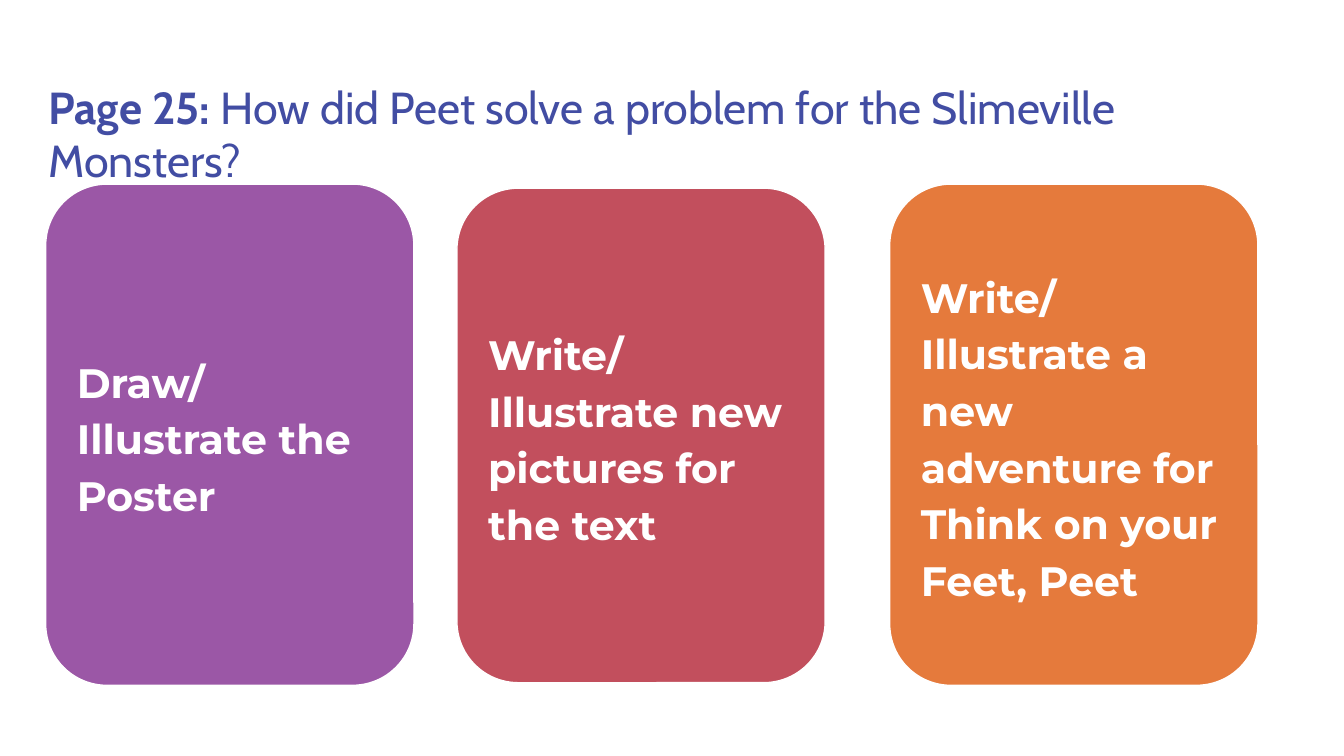
"""Build a slide with a question and three activity cards."""
import dataclasses

import pptx
import pptx.dml.color
import pptx.enum.shapes
import pptx.enum.text
import pptx.slide
import pptx.text.text
import pptx.util

Inches = pptx.util.Inches
Pt = pptx.util.Pt
Align = pptx.enum.text.PP_ALIGN
Anchor = pptx.enum.text.MSO_ANCHOR

COLORS = {
    "white": "FFFFFF",
    "blue": "424DA3",
    "purple": "9B57A6",
    "red": "C24F5D",
    "orange": "E57A3C",
}


@dataclasses.dataclass
class Card:
    left: float
    top: float
    height: float
    fill: str
    text: str


CARDS = [
    Card(0.34, 1.37, 3.73, "purple", "Draw/ Illustrate the Poster"),
    Card(3.4, 1.4, 3.68, "red", "Write/ Illustrate new pictures for the text"),
    Card(6.62, 1.37, 3.73, "orange",
         "Write/ Illustrate a new adventure for Think on your Feet, Peet"),
]


def color(name: str) -> pptx.dml.color.RGBColor:
    return pptx.dml.color.RGBColor.from_string(COLORS[name])


def style(run: pptx.text.text._Run, face: str, size: int, tint: str, bold: bool) -> None:
    run.font.name = face
    run.font.size = Pt(size)
    run.font.color.rgb = color(tint)
    run.font.bold = bold


def frame(box: pptx.text.text.TextFrame, anchor: Anchor) -> None:
    box.word_wrap = True
    box.auto_size = pptx.enum.text.MSO_AUTO_SIZE.NONE
    box.vertical_anchor = anchor
    box.margin_left = box.margin_right = Inches(0.1)
    box.margin_top = box.margin_bottom = Inches(0.1)
    box.paragraphs[0].alignment = Align.LEFT


def draw_title(slide: pptx.slide.Slide) -> None:
    title = slide.shapes.title
    title.left, title.top = Inches(0.26), Inches(0.49)
    title.width, title.height = Inches(9.5), Inches(0.63)
    frame(title.text_frame, Anchor.TOP)
    line = title.text_frame.paragraphs[0]
    line.text = "Page 25:"
    line.add_run().text = " How did Peet solve a problem for the Slimeville Monsters?"
    for run, bold in zip(line.runs, (True, False)):
        style(run, "Cabin", 24, "blue", bold)


def draw_card(slide: pptx.slide.Slide, card: Card) -> None:
    shape = slide.shapes.add_shape(
        pptx.enum.shapes.MSO_SHAPE.ROUNDED_RECTANGLE,
        Inches(card.left), Inches(card.top), Inches(2.74), Inches(card.height))
    shape.shadow.inherit = False
    shape.fill.solid()
    shape.fill.fore_color.rgb = color(card.fill)
    shape.line.color.rgb = color("white")
    shape.line.width = Pt(0.75)
    shape.text_frame.text = card.text
    frame(shape.text_frame, Anchor.MIDDLE)
    line = shape.text_frame.paragraphs[0]
    line.line_spacing = 1.15
    line.space_after = Pt(16)
    style(line.runs[0], "Montserrat", 22, "white", True)


def main() -> None:
    deck = pptx.Presentation()
    deck.slide_width = Inches(10)
    deck.slide_height = Inches(10 * 9 / 16)
    slide = deck.slides.add_slide(deck.slide_layouts.get_by_name("Title Only"))
    draw_title(slide)
    for card in CARDS:
        draw_card(slide, card)
    deck.save("out.pptx")


if __name__ == "__main__":
    main()
